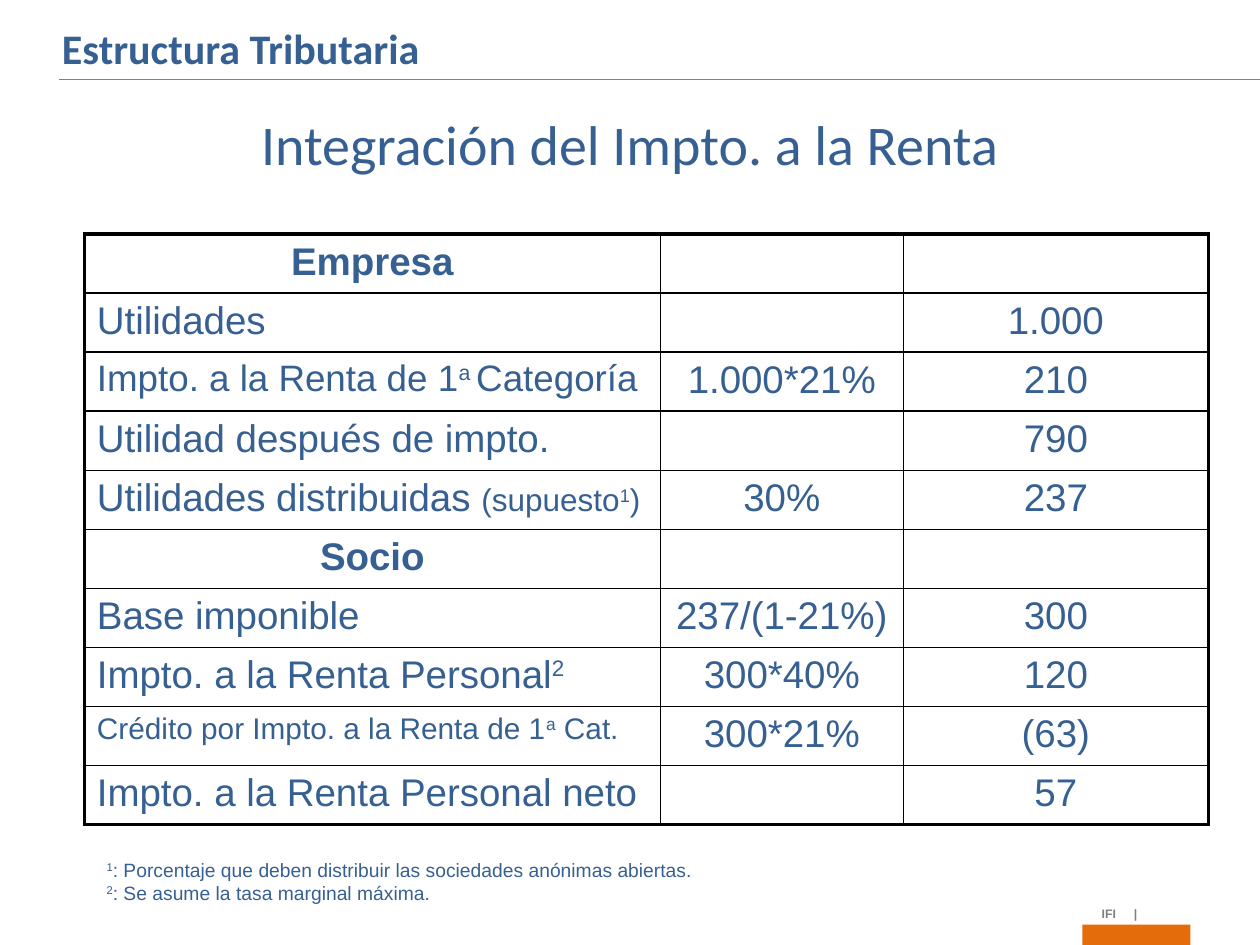
from lxml import etree
from pptx import Presentation
from pptx.dml.color import RGBColor
from pptx.enum.shapes import MSO_CONNECTOR, MSO_SHAPE
from pptx.enum.text import MSO_ANCHOR, PP_ALIGN
from pptx.oxml.ns import qn
from pptx.util import Cm, Pt

LEFT, CENTER = PP_ALIGN.LEFT, PP_ALIGN.CENTER
TOP, MIDDLE = MSO_ANCHOR.TOP, MSO_ANCHOR.MIDDLE
RECTANGLE = MSO_SHAPE.RECTANGLE
STRAIGHT = MSO_CONNECTOR.STRAIGHT

THEME = {
    "text": RGBColor(0x37, 0x60, 0x92),
    "footer": RGBColor(0x7F, 0x7F, 0x7F),
    "rule": RGBColor(0x80, 0x80, 0x80),
    "accent": RGBColor(0xE4, 0x6C, 0x0A),
    "border": "000000",
    "heading_font": "Calibri",
    "body_font": "Arial",
    "title_size": 32,
    "section_size": 24,
    "table_size": 22,
    "category_size": 21,
    "remark_size": 18,
    "credit_size": 17,
    "note_size": 11,
    "footer_size": 7,
    "outer_border": 2.25,
    "inner_border": 1,
}


def write_text(paragraph, text, size, font="body_font", color="text", bold=False):
    for index, piece in enumerate(text.split("^")):
        run = paragraph.add_run()
        run.text = piece
        values = {"name": THEME[font], "size": Pt(THEME[size]), "bold": bold}
        for name, value in values.items():
            setattr(run.font, name, value)
        run.font.color.rgb = THEME[color]
        if index % 2:
            run.font._element.set("baseline", "30000")


def draw_border(cell, side, width):
    properties = cell._tc.get_or_add_tcPr()
    line = etree.SubElement(properties, qn(f"a:ln{side}"), w=str(Pt(width)))
    fill = etree.SubElement(line, qn("a:solidFill"))
    etree.SubElement(fill, qn("a:srgbClr"), val=THEME["border"])


presentation = Presentation()
presentation.slide_width = Cm(25.4)
presentation.slide_height = Cm(19.05)
slide = presentation.slides.add_slide(presentation.slide_layouts[5])

bar = slide.shapes.add_shape(RECTANGLE, Cm(21.82), Cm(18.64), Cm(2.18), Cm(0.41))
bar.shadow.inherit = False
bar.fill.solid()
bar.fill.fore_color.rgb = THEME["accent"]
bar.line.fill.background()

rule = slide.shapes.add_connector(STRAIGHT, Cm(1.19), Cm(1.6), Cm(25.4), Cm(1.6))
rule.line.color.rgb = THEME["rule"]
rule.line.width = Pt(0.75)
etree.SubElement(rule._element.spPr, qn("a:effectLst"))

title = slide.shapes.title
title_format = {"left": Cm(1.9), "top": Cm(1.83), "width": Cm(21.6), "height": Cm(2.1)}
for name, value in title_format.items():
    setattr(title, name, value)
title.text_frame.vertical_anchor = MIDDLE
title_paragraph = title.text_frame.paragraphs[0]
title_paragraph.alignment = CENTER
write_text(title_paragraph, "Integración del Impto. a la Renta", "title_size", "heading_font")

section = slide.shapes.add_textbox(Cm(1), Cm(0.33), Cm(7.8), Cm(1.27))
section.text_frame.word_wrap = False
write_text(section.text_frame.paragraphs[0], "Estructura Tributaria",
           "section_size", "heading_font", bold=True)

rows = [
    ([("Empresa", "table_size")], "", ""),
    ([("Utilidades", "table_size")], "", "1.000"),
    ([("Impto. a la Renta de 1^a ^Categoría", "category_size")], "1.000*21%", "210"),
    ([("Utilidad después de impto.", "table_size")], "", "790"),
    ([("Utilidades distribuidas ", "table_size"), ("(supuesto^1^)", "remark_size")],
     "30%", "237"),
    ([("Socio", "table_size")], "", ""),
    ([("Base imponible", "table_size")], "237/(1-21%)", "300"),
    ([("Impto. a la Renta Personal^2", "table_size")], "300*40%", "120"),
    ([("Crédito por Impto. a la Renta de 1^a^ Cat.", "credit_size")], "300*21%", "(63)"),
    ([("Impto. a la Renta Personal neto", "table_size")], "", "57"),
]
column_widths = [Cm(11.61), Cm(4.9), Cm(6.15)]
row_height = Cm(1.19)
last_row, last_column = len(rows) - 1, len(column_widths) - 1

table = slide.shapes.add_table(len(rows), len(column_widths), Cm(1.7), Cm(4.72),
                               sum(column_widths), row_height * len(rows)).table
for name in ("first_row", "horz_banding"):
    setattr(table, name, False)
for column, width in zip(table.columns, column_widths):
    column.width = width

for row_index, (label, formula, amount) in enumerate(rows):
    table.rows[row_index].height = row_height
    is_group = not formula and not amount
    contents = [label, [(formula, "table_size")], [(amount, "table_size")]]
    for column_index, pieces in enumerate(contents):
        cell = table.cell(row_index, column_index)
        outer_sides = {
            "L": column_index == 0,
            "R": column_index == last_column,
            "T": row_index == 0,
            "B": row_index == last_row,
        }
        for side, is_outer in outer_sides.items():
            draw_border(cell, side, THEME["outer_border" if is_outer else "inner_border"])
        cell.fill.background()
        cell.vertical_anchor = TOP
        paragraph = cell.text_frame.paragraphs[0]
        paragraph.alignment = CENTER if is_group or column_index else LEFT
        paragraph.space_before = Pt(1)
        for text, size in pieces:
            if text:
                write_text(paragraph, text, size, bold=is_group)

notes = slide.shapes.add_textbox(Cm(1.9), Cm(17.17), Cm(16.8), Cm(1.19))
notes.text_frame.word_wrap = True
note_texts = [
    "^1^: Porcentaje que deben distribuir las sociedades anónimas abiertas.",
    "^2^: Se asume la tasa marginal máxima.",
]
note_paragraphs = [notes.text_frame.paragraphs[0], notes.text_frame.add_paragraph()]
for paragraph, text in zip(note_paragraphs, note_texts):
    write_text(paragraph, text, "note_size")

footer = slide.shapes.add_textbox(Cm(21.31), Cm(18.14), Cm(2), Cm(0.56))
footer.text_frame.word_wrap = True
footer.text_frame.margin_left = Cm(0.9)
footer_paragraph = footer.text_frame.paragraphs[0]
write_text(footer_paragraph, "IFI\t|", "footer_size", color="footer", bold=True)
tab_stops = etree.SubElement(footer_paragraph._p.get_or_add_pPr(), qn("a:tabLst"))
etree.SubElement(tab_stops, qn("a:tab"), pos=str(Cm(0.65)), algn="l")

presentation.save("out.pptx")
